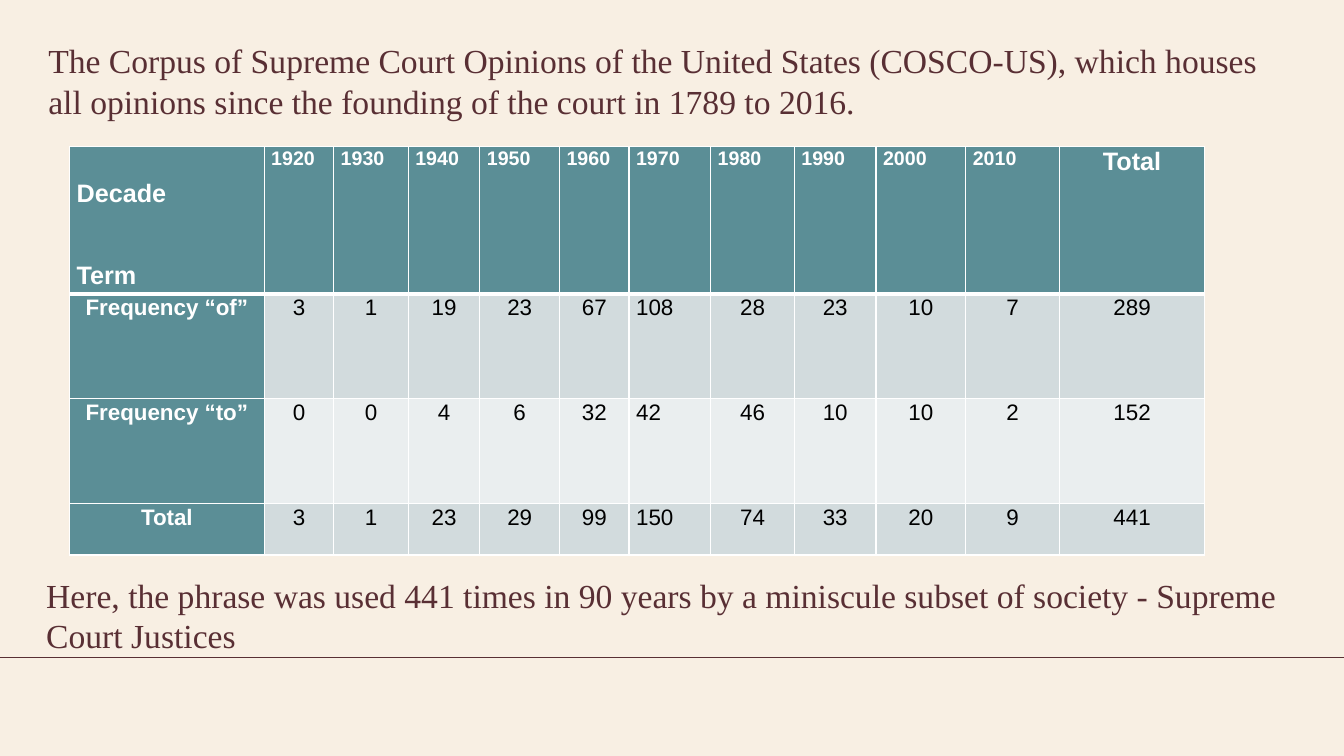
from lxml import etree
from pptx import Presentation
from pptx.dml.color import RGBColor
from pptx.enum import shapes, text
from pptx.oxml import ns
from pptx.util import Inches, Pt

CREAM = RGBColor(0xF8, 0xEF, 0xE3)
MAROON = RGBColor(0x59, 0x2F, 0x34)
TEAL = RGBColor(0x5B, 0x8E, 0x96)
DARK_BAND = RGBColor(0xD2, 0xDB, 0xDD)
LIGHT_BAND = RGBColor(0xEA, 0xEE, 0xEF)
WHITE = RGBColor(0xFF, 0xFF, 0xFF)
BLACK = RGBColor(0, 0, 0)

COLUMN_WIDTHS = [1.93, 0.69, 0.74, 0.71, 0.79, 0.69, 0.81, 0.83, 0.81, 0.89, 0.93, 1.44]
ROW_HEIGHTS = [1.42, 1.04, 1.04, 0.51]
DECADES = [str(year) for year in range(1920, 2011, 10)]
COUNTS = [
    ["Frequency “of”", 3, 1, 19, 23, 67, 108, 28, 23, 10, 7, 289],
    ["Frequency “to”", 0, 0, 4, 6, 32, 42, 46, 10, 10, 2, 152],
    ["Total", 3, 1, 23, 29, 99, 150, 74, 33, 20, 9, 441],
]
LEFT_ALIGNED_COLUMN = DECADES.index("1970") + 1


def add_span(para, words, size, font, color, bold=False):
    """Add one styled run to a paragraph."""
    span = para.add_run()
    span.text = words
    span.font.size = Pt(size)
    span.font.name = font
    span.font.color.rgb = color
    span.font.bold = bold


def add_statement(page, words, left, top, width, height, inset, anchor):
    """Add a wrapped serif statement."""
    box = page.shapes.add_textbox(Inches(left), Inches(top), Inches(width), Inches(height))
    frame = box.text_frame
    frame.word_wrap = True
    frame.vertical_anchor = anchor
    frame.margin_left = frame.margin_right = Inches(inset)
    frame.margin_top = frame.margin_bottom = Inches(inset / 2)
    add_span(frame.paragraphs[0], words, 24, "Times New Roman", MAROON)


def add_rule(page, top, width):
    """Add the thin line across the page."""
    line = page.shapes.add_connector(
        shapes.MSO_CONNECTOR.STRAIGHT, 0, Inches(top), Inches(width), Inches(top))
    line.line.color.rgb = MAROON
    line.line.width = Pt(0.75)
    etree.SubElement(line._element.spPr, ns.qn("a:effectLst"))


def set_borders(cell, widths):
    """Draw white cell borders with the given left, right, top and bottom widths."""
    properties = cell._tc.get_or_add_tcPr()
    for position, (side, width) in enumerate(zip("LRTB", widths)):
        border = etree.Element(ns.qn(f"a:ln{side}"), w=str(Pt(width)))
        fill = etree.SubElement(border, ns.qn("a:solidFill"))
        etree.SubElement(fill, ns.qn("a:srgbClr"), val=str(WHITE))
        properties.insert(position, border)


def fill_cell(cell, lines, size, fill, color, bold, align, gap=8):
    """Write paragraphs into a cell and paint it."""
    cell.fill.solid()
    cell.fill.fore_color.rgb = fill
    cell.margin_left = cell.margin_right = Inches(0.07)
    cell.margin_top = cell.margin_bottom = 0
    frame = cell.text_frame
    for number, words in enumerate(lines):
        para = frame.add_paragraph() if number else frame.paragraphs[0]
        para.alignment = align
        para.line_spacing = 1.07
        para.space_after = Pt(gap)
        add_span(para, words, size, "Arial", color, bold)


def add_frequency_table(page):
    """Add the table of term frequency by decade."""
    table = page.shapes.add_table(
        len(ROW_HEIGHTS), len(COLUMN_WIDTHS), Inches(0.69), Inches(1.45),
        Inches(sum(COLUMN_WIDTHS)), Inches(sum(ROW_HEIGHTS))).table
    for column, width in zip(table.columns, COLUMN_WIDTHS):
        column.width = Inches(width)
    for row, height in zip(table.rows, ROW_HEIGHTS):
        row.height = Inches(height)

    left, center = text.PP_ALIGN.LEFT, text.PP_ALIGN.CENTER
    corner = table.cell(0, 0)
    fill_cell(corner, ["Decade", "Term"], 18, TEAL, WHITE, True, left, gap=37)
    corner.margin_top = Inches(0.31)
    for column, decade in enumerate(DECADES, 1):
        fill_cell(table.cell(0, column), [decade], 14, TEAL, WHITE, True, left)
    fill_cell(table.cell(0, len(DECADES) + 1), ["Total"], 18, TEAL, WHITE, True, center)

    for row, values in enumerate(COUNTS, 1):
        band = DARK_BAND if row % 2 else LIGHT_BAND
        for column, value in enumerate(values):
            is_label = column == 0
            fill_cell(table.cell(row, column), [str(value)], 16,
                      TEAL if is_label else band, WHITE if is_label else BLACK, is_label,
                      left if column == LEFT_ALIGNED_COLUMN else center)

    for row in range(len(ROW_HEIGHTS)):
        widths = (1, 1, 3 if row == 1 else 1, 3 if row == 0 else 1)
        for column in range(len(COLUMN_WIDTHS)):
            set_borders(table.cell(row, column), widths)


def main():
    """Build the slide and save it."""
    deck = Presentation()
    deck.slide_width, deck.slide_height = Inches(13.33), Inches(7.5)
    page = deck.slides.add_slide(deck.slide_layouts[6])
    page.background.fill.solid()
    page.background.fill.fore_color.rgb = CREAM

    add_rule(page, 6.52, 13.33)
    add_statement(
        page,
        "The Corpus of Supreme Court Opinions of the United States (COSCO-US), which houses "
        "all opinions since the founding of the court in 1789 to 2016.",
        0.48, 0.22, 12.36, 0.98, 0, text.MSO_ANCHOR.BOTTOM)
    add_frequency_table(page)
    add_statement(
        page,
        "Here, the phrase was used 441 times in 90 years by a miniscule subset of society - "
        "Supreme Court Justices",
        0.36, 5.65, 12.61, 0.91, 0.1, text.MSO_ANCHOR.TOP)
    deck.save("out.pptx")


if __name__ == "__main__":
    main()
